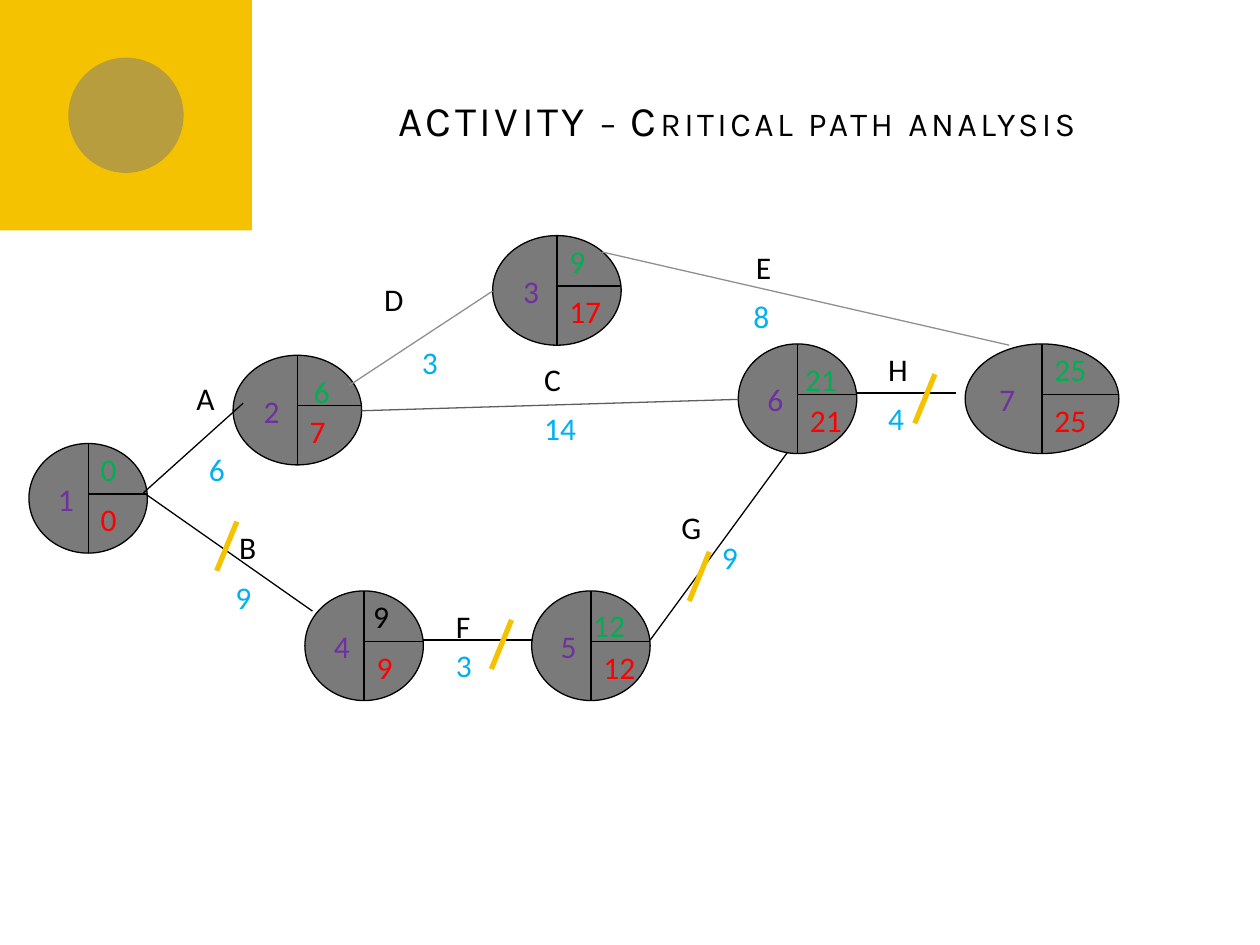
from lxml import etree
from pptx import Presentation
from pptx.dml.color import RGBColor
from pptx.enum.shapes import MSO_CONNECTOR, MSO_SHAPE
from pptx.enum.text import MSO_ANCHOR, MSO_AUTO_SIZE, PP_ALIGN
from pptx.oxml.ns import qn
from pptx.util import Inches, Pt

STRAIGHT = MSO_CONNECTOR.STRAIGHT
RECTANGLE = MSO_SHAPE.RECTANGLE
OVAL = MSO_SHAPE.OVAL
NODE_SHAPE = MSO_SHAPE.FLOWCHART_CONNECTOR
MIDDLE = MSO_ANCHOR.MIDDLE
GROW = MSO_AUTO_SIZE.SHAPE_TO_FIT_TEXT
CENTER = PP_ALIGN.CENTER

BLACK = RGBColor(0x00, 0x00, 0x00)
GRAY = RGBColor(0x7A, 0x7A, 0x7A)
DARK_GRAY = RGBColor(0x5E, 0x5E, 0x5E)
LIGHT_GRAY = RGBColor(0x8F, 0x8F, 0x8F)
GOLD = RGBColor(0xF5, 0xC2, 0x01)
PURPLE = RGBColor(0x70, 0x30, 0xA0)
GREEN = RGBColor(0x00, 0xB0, 0x50)
RED = RGBColor(0xFF, 0x00, 0x00)
BLUE = RGBColor(0x00, 0xB0, 0xF0)

TEXT_HEIGHT = 0.4
NODE_HEIGHT = 0.87
SPLIT = 0.4

# number, left, top, width, (early, dx, dy, text width, colour), (late, text width)
NODES = [
    ("1", 0.23, 3.52, 0.94, ("0", 0, 0, 0.4, GREEN), ("0", 0.34)),
    ("2", 1.85, 2.82, 1.02, ("6", 0.04, 0.08, 0.19, GREEN), ("7", 0.37)),
    ("3", 3.91, 1.87, 1.02, ("9", 0, 0, 0.44, GREEN), ("17", 0.5)),
    ("4", 2.42, 4.69, 0.94, ("9", 0, 0, 0.17, BLACK), ("9", 0.54)),
    ("5", 4.22, 4.69, 0.94, ("12", -0.08, 0.07, 0.55, GREEN), ("12", 0.46)),
    ("6", 5.86, 2.73, 0.94, ("21", -0.04, 0.08, 0.46, GREEN), ("21", 0.52)),
    ("7", 7.66, 2.73, 1.22, ("25", 0, 0, 0.52, GREEN), ("25", 0.52)),
]

# start, end, colour, (name, left, top, width), (duration, left, top, width), tick
ACTIVITIES = [
    ((1.14, 3.91), (1.93, 3.2), BLACK, ("A", 1.46, 2.96, 0.39), ("6", 1.56, 3.52, 0.39), None),
    ((1.14, 3.91), (2.48, 4.85), BLACK, ("B", 1.8, 4.14, 0.49), ("9", 1.77, 4.54, 0.47), (1.88, 4.14)),
    ((2.87, 3.26), (5.86, 3.17), DARK_GRAY, ("C", 4.22, 2.81, 0.49), ("14", 4.22, 3.2, 0.63), None),
    ((2.77, 3.06), (3.91, 2.31), LIGHT_GRAY, ("D", 2.95, 2.17, 0.49), ("3", 3.25, 2.67, 0.39), None),
    ((4.78, 2), (8.01, 2.74), LIGHT_GRAY, ("E", 5.9, 1.92, 0.49), ("8", 5.88, 2.31, 0.39), None),
    ((3.36, 5.08), (4.23, 5.08), BLACK, ("F", 3.52, 4.77, 0.49), ("3", 3.52, 5.08, 0.39), (4.06, 4.92)),
    ((5.16, 5.08), (6.25, 3.59), BLACK, ("G", 5.31, 3.98, 0.49), ("9", 5.63, 4.22, 0.39), (5.63, 4.38)),
    ((6.8, 3.12), (7.59, 3.12), BLACK, ("H", 6.95, 2.73, 0.54), ("4", 6.95, 3.12, 0.39), (7.42, 2.97)),
]


def add_shape(shapes, kind, left, top, width, height, fill, line=None):
    shape = shapes.add_shape(kind, Inches(left), Inches(top), Inches(width), Inches(height))
    shape.shadow.inherit = False
    shape.fill.solid()
    shape.fill.fore_color.rgb = fill
    if line is None:
        shape.line.fill.background()
    else:
        shape.line.color.rgb = line
        shape.line.width = Pt(0.75)
    return shape


def add_line(shapes, start, end, color, weight=0.75):
    line = shapes.add_connector(STRAIGHT, *(Inches(value) for value in (*start, *end)))
    line.line.color.rgb = color
    line.line.width = Pt(weight)
    etree.SubElement(line._element.spPr, qn("a:effectLst"))


def add_label(shapes, text, left, top, width, color):
    box = shapes.add_textbox(Inches(left), Inches(top), Inches(width), Inches(TEXT_HEIGHT))
    frame = box.text_frame
    frame.word_wrap = True
    frame.auto_size = GROW
    para = frame.paragraphs[0]
    para.text = text
    para.font.name = "Calibri"
    para.font.size = Pt(18)
    para.font.color.rgb = color


def add_corner(page, left, top, width, height):
    corner = page.shapes.add_group_shape().shapes
    add_shape(corner, RECTANGLE, left, top, width, height, GOLD)
    size = height / 2
    circle = add_shape(corner, OVAL, left + (width - size) / 2, top + (height - size) / 2,
                       size, size, GRAY)
    color = circle._element.spPr.find(qn("a:solidFill"))[0]
    etree.SubElement(color, qn("a:alpha"), val="50000")


def add_title(page, left, top, width, height):
    box = page.shapes.add_textbox(Inches(left), Inches(top), Inches(width), Inches(height))
    frame = box.text_frame
    frame.word_wrap = True
    frame.vertical_anchor = MIDDLE
    para = frame.paragraphs[0]
    para.alignment = CENTER
    para.font.name = "Karla"
    para.font.size = Pt(24)
    para.font.color.rgb = BLACK
    span = para.add_run()
    span.text = "ACTIVITY – Critical path analysis"
    properties = span._r.get_or_add_rPr()
    properties.set("cap", "small")
    properties.set("spc", "200")


def add_node(page, number, left, top, width, early, late):
    node = page.shapes.add_group_shape().shapes
    middle = left + width / 2
    split = top + SPLIT
    add_shape(node, NODE_SHAPE, left, top, width, NODE_HEIGHT, GRAY, BLACK)
    add_line(node, (middle, top), (middle, top + NODE_HEIGHT), BLACK)
    add_line(node, (middle, split), (left + width, split), BLACK)
    add_label(node, number, left + width * 0.14, top + 0.24, width * 0.29, PURPLE)
    early_time, dx, dy, early_width, early_color = early
    add_label(node, early_time, middle + dx, top + dy, early_width, early_color)
    late_time, late_width = late
    add_label(node, late_time, middle, split, late_width, RED)


def add_activity(page, start, end, color, name, duration, tick):
    add_line(page.shapes, start, end, color)
    add_label(page.shapes, *name, BLACK)
    add_label(page.shapes, *duration, BLUE)
    if tick:
        x, y = tick
        add_line(page.shapes, (x, y), (x - 0.16, y + 0.39), GOLD, 3)


def main():
    deck = Presentation()
    deck.slide_width = Inches(10)
    deck.slide_height = Inches(7.5)
    page = deck.slides.add_slide(deck.slide_layouts[6])
    add_corner(page, 0, 0, 2, 1.83)
    add_title(page, 2.95, 0.44, 6.72, 1.02)
    for node in NODES:
        add_node(page, *node)
    for activity in ACTIVITIES:
        add_activity(page, *activity)
    deck.save("out.pptx")


if __name__ == "__main__":
    main()
